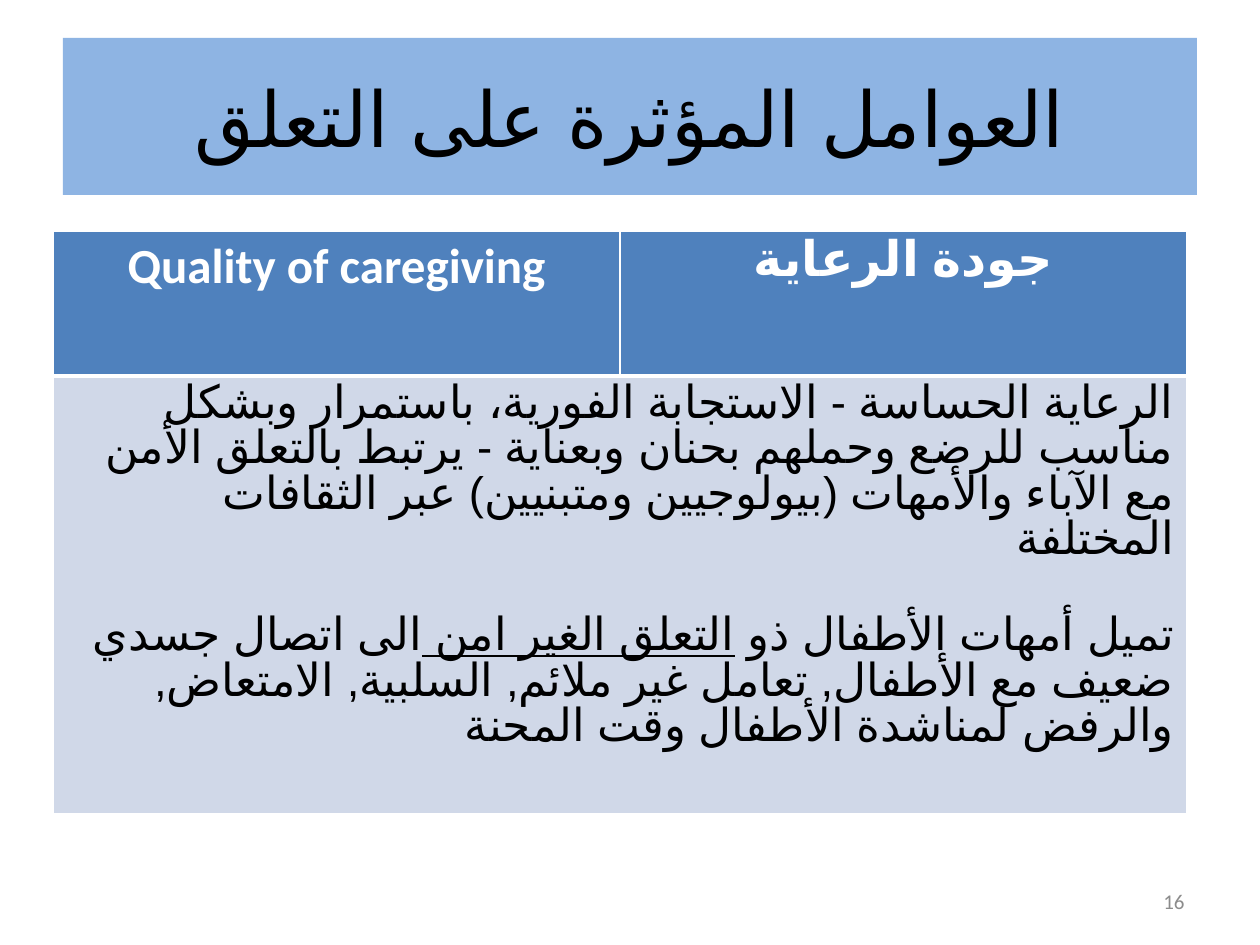
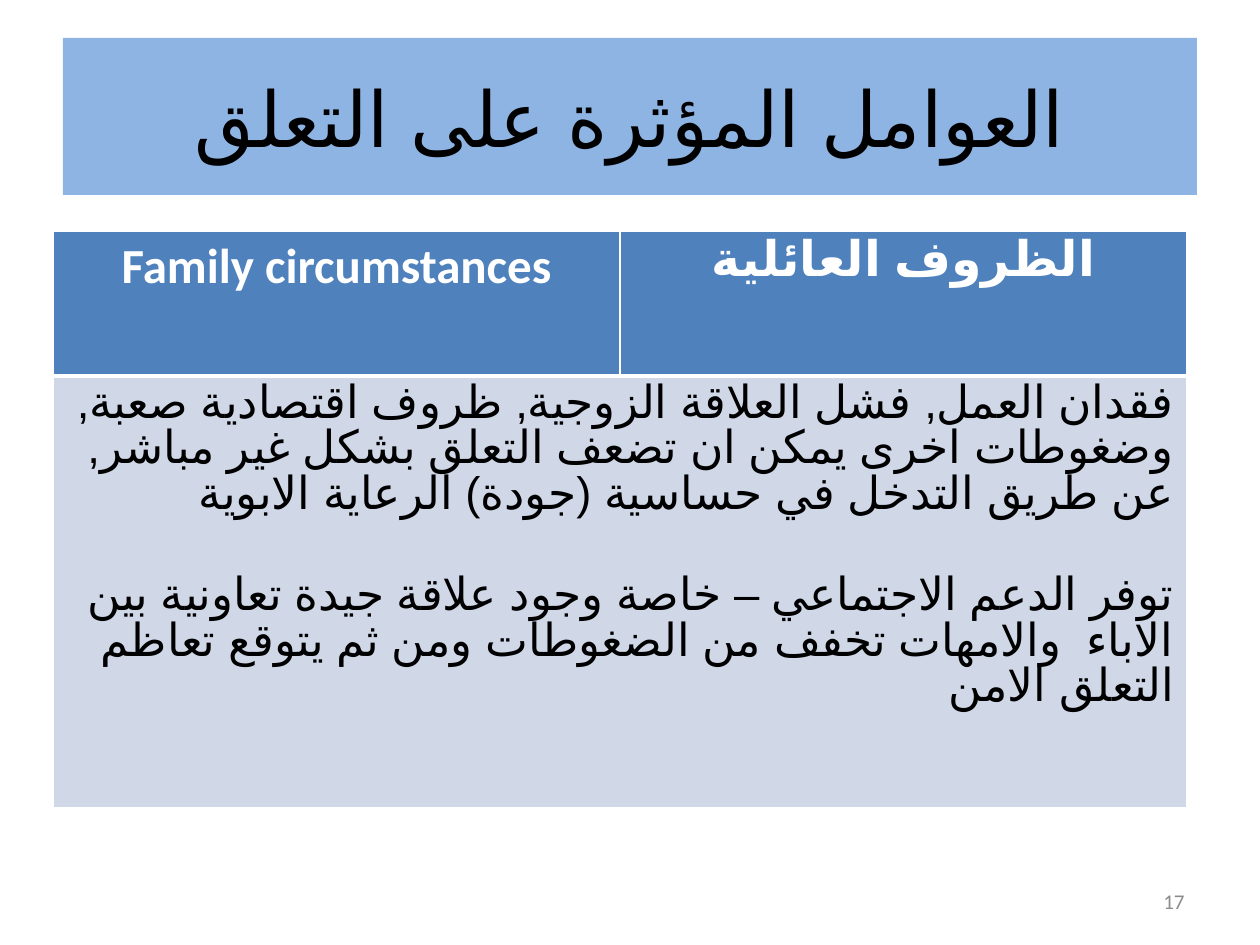
from lxml.etree import SubElement
from pptx import Presentation
from pptx.dml.color import RGBColor
from pptx.enum.lang import MSO_LANGUAGE_ID as Language
from pptx.enum.shapes import MSO_SHAPE as Shape
from pptx.enum.text import MSO_ANCHOR as Anchor, PP_ALIGN as Align
from pptx.oxml.ns import qn
from pptx.util import Emu, Pt

# Shared look
COLORS = {
    "band": "8EB4E3",
    "header": "4F81BD",
    "body": "D0D8E8",
    "white": "FFFFFF",
    "black": "000000",
    "number": "8C8C8C",
}
FONT, ARABIC_FONT = "Calibri", "Arial"
TITLE = "العوامل المؤثرة على التعلق"
COLUMN_WIDTH, HEADER_HEIGHT = 567, 145
HEADER_SIZE, BODY_SIZE = 28, 26

# Each body paragraph is a list of (text, underlined) runs
FACTORS = [
    {
        "number": "16",
        "headers": ("Quality of caregiving", "جودة الرعاية"),
        "body_height": 438,
        "gap": 29,
        "body": [
            [("الرعاية الحساسة - الاستجابة الفورية، باستمرار وبشكل مناسب للرضع "
              "وحملهم بحنان وبعناية - يرتبط بالتعلق الأمن مع الآباء والأمهات "
              "(بيولوجيين ومتبنيين) عبر الثقافات المختلفة", False)],
            [("تميل أمهات الأطفال ذو ", False),
             ("التعلق الغير امن ", True),
             ("الى اتصال جسدي ضعيف مع الأطفال, تعامل غير ملائم, السلبية, "
              "الامتعاض, والرفض لمناشدة الأطفال وقت المحنة", False)],
        ],
    },
    {
        "number": "17",
        "headers": ("Family circumstances", "الظروف العائلية"),
        "body_height": 432,
        "gap": 32,
        "body": [
            [("فقدان العمل, فشل العلاقة الزوجية, ظروف اقتصادية صعبة, وضغوطات "
              "اخرى يمكن ان تضعف التعلق بشكل غير مباشر, عن طريق التدخل في "
              "حساسية (جودة) الرعاية الابوية", False)],
            [("توفر الدعم الاجتماعي – خاصة وجود علاقة جيدة تعاونية بين الاباء  "
              "والامهات تخفف من الضغوطات ومن ثم يتوقع تعاظم التعلق الامن", False)],
        ],
    },
]


def px(length):
    return Emu(round(length * 914400 / 126))


def color(name):
    return RGBColor.from_string(COLORS[name])


def add_span(para, text, size, color_name, bold=False, underline=False):
    span = para.add_run()
    span.text = text
    font = span.font
    font.name, font.size = FONT, Pt(size)
    font.bold, font.underline = bold, underline
    font.color.rgb = color(color_name)
    if not text.isascii():  # Arabic takes the complex-script font
        font.language_id = Language.ARABIC
        SubElement(span._r.get_or_add_rPr(), qn("a:cs"), typeface=ARABIC_FONT)


# Title band and page number
def add_title_band(page):
    band = page.shapes.add_shape(Shape.RECTANGLE, px(63), px(38), px(1134), px(157))
    band.shadow.inherit = False
    band.fill.solid()
    band.fill.fore_color.rgb = color("band")
    band.line.fill.background()
    band.text_frame.vertical_anchor = Anchor.MIDDLE
    para = band.text_frame.paragraphs[0]
    para.alignment = Align.CENTER
    add_span(para, TITLE, 44, "black")


def add_page_number(page, number):
    box = page.shapes.add_textbox(px(904), px(876), px(293), px(50))
    box.text_frame.word_wrap = True
    box.text_frame.vertical_anchor = Anchor.MIDDLE
    para = box.text_frame.paragraphs[0]
    para.alignment = Align.RIGHT
    add_span(para, number, 12, "number")


# Table
def style_cell(cell, fill_name, top, bottom):
    properties = cell._tc.get_or_add_tcPr()
    for side, width in (("L", 1), ("R", 1), ("T", top), ("B", bottom)):
        line = SubElement(properties, qn(f"a:ln{side}"), w=str(Pt(width)))
        fill = SubElement(line, qn("a:solidFill"))
        SubElement(fill, qn("a:srgbClr"), val=COLORS["white"])
    cell.fill.solid()
    cell.fill.fore_color.rgb = color(fill_name)


def fill_body(cell, paragraphs, gap):
    frame = cell.text_frame
    for index, runs in enumerate(paragraphs):
        para = frame.add_paragraph() if index else frame.paragraphs[0]
        para.alignment = Align.RIGHT
        para.line_spacing = Pt(BODY_SIZE)
        if index:
            para.space_before = Pt(gap)
        for text, underline in runs:
            add_span(para, text, BODY_SIZE, "black", underline=underline)


def add_factor_table(page, factor):
    heights = (HEADER_HEIGHT, factor["body_height"])
    table = page.shapes.add_table(
        2, 2, px(53), px(231), px(2 * COLUMN_WIDTH), px(sum(heights))).table
    for row, height in zip(table.rows, heights):
        row.height = px(height)
    for index, header in enumerate(factor["headers"]):
        table.columns[index].width = px(COLUMN_WIDTH)
        cell = table.cell(0, index)
        style_cell(cell, "header", 1, 3)
        style_cell(table.cell(1, index), "body", 3, 1)
        para = cell.text_frame.paragraphs[0]
        para.alignment = Align.CENTER
        if not header.isascii():  # Arabic lines are set tight
            para.line_spacing = Pt(HEADER_SIZE)
        add_span(para, header, HEADER_SIZE, "white", bold=True)
    body = table.cell(1, 0)
    body.merge(table.cell(1, 1))
    fill_body(body, factor["body"], factor["gap"])


def main():
    deck = Presentation()
    deck.slide_width, deck.slide_height = px(1260), px(945)
    for factor in FACTORS:
        page = deck.slides.add_slide(deck.slide_layouts[6])
        add_title_band(page)
        add_factor_table(page, factor)
        add_page_number(page, factor["number"])
    deck.save("out.pptx")


if __name__ == "__main__":
    main()
